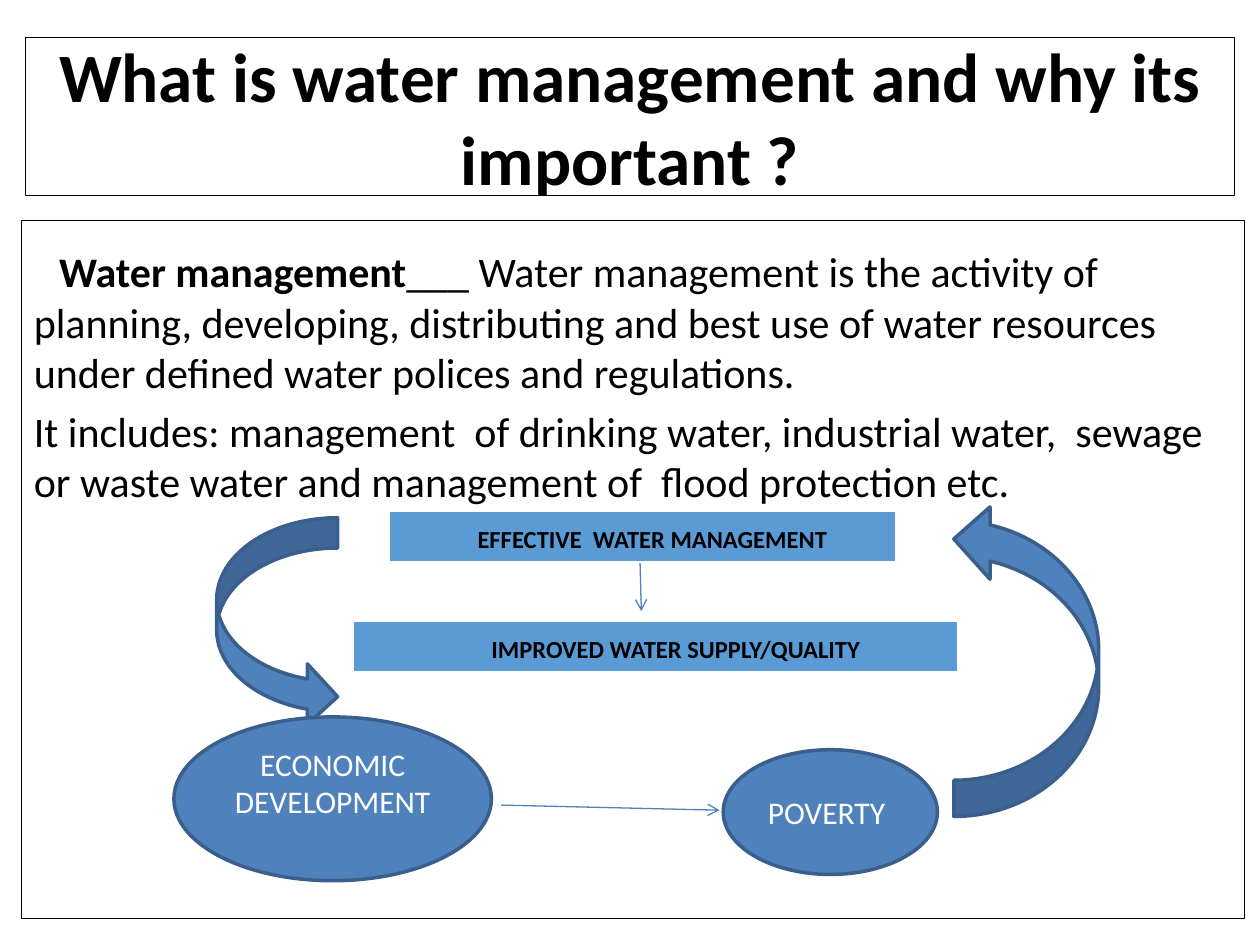
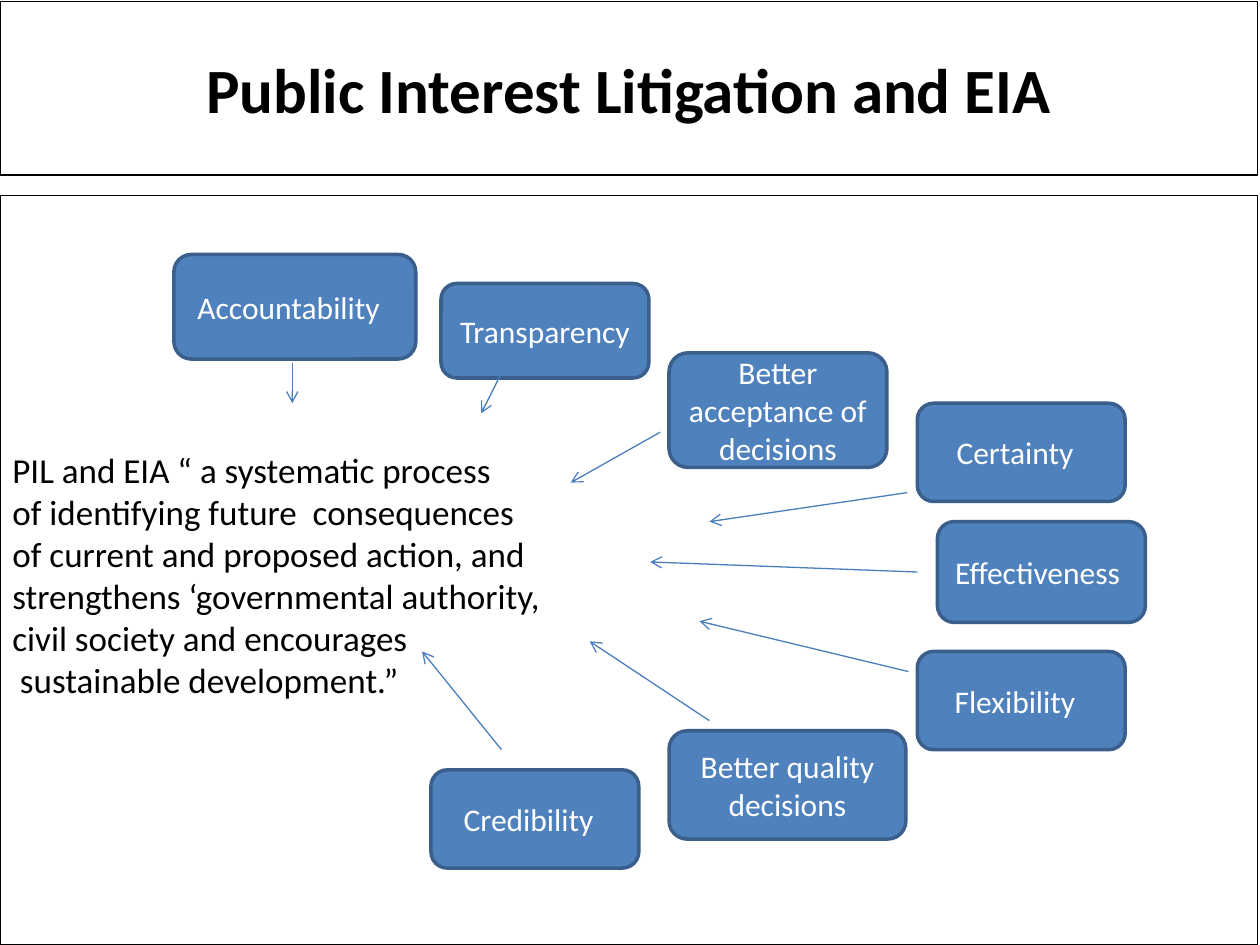
import pptx
import pptx.util
import pptx.dml.color
import pptx.enum.shapes
import pptx.enum.text
import pptx.oxml.ns
from lxml import etree

Inches = pptx.util.Inches
Pt = pptx.util.Pt
Kind = pptx.enum.shapes.MSO_SHAPE
Align = pptx.enum.text.PP_ALIGN
Anchor = pptx.enum.text.MSO_ANCHOR

FONT = "Calibri"
BLACK, WHITE = "000000", "FFFFFF"
BLUE, EDGE, BAND = "4F81BD", "3A5F8C", "5B9BD5"


def color(code):
    return pptx.dml.color.RGBColor.from_string(code)


class Deck:
    """Holds the style and the current slide."""

    def __init__(self):
        self.prs = pptx.Presentation()
        self.prs.slide_width = Inches(10)
        self.prs.slide_height = Inches(7.5)
        self.slide = None

    def page(self):
        self.slide = self.prs.slides.add_slide(self.prs.slide_layouts[6])

    def shape(self, kind, at, fill=BLUE, line=EDGE, width=2):
        item = self.slide.shapes.add_shape(kind, *map(Inches, at))
        item.shadow.inherit = False
        if fill:
            item.fill.solid()
            item.fill.fore_color.rgb = color(fill)
        else:
            item.fill.background()
        item.line.color.rgb = color(line)
        item.line.width = Pt(width)
        return item

    def frame(self, item, insets, anchor=Anchor.MIDDLE):
        """Set wrapping, anchor and insets (left, top, right, bottom)."""
        text = item.text_frame
        text.word_wrap = True
        text.vertical_anchor = anchor
        (text.margin_left, text.margin_top,
         text.margin_right, text.margin_bottom) = map(Inches, insets)
        return text

    def para(self, text, runs, size, ink=BLACK, align=Align.LEFT,
             first=False, before=0, indent=0):
        """Add a paragraph from (words, bold) runs."""
        par = text.paragraphs[0] if first else text.add_paragraph()
        par.alignment = align
        if before:
            par.space_before = Pt(before)
        if indent:
            par._p.get_or_add_pPr().set("indent", str(Inches(indent)))
        for words, bold in runs:
            run = par.add_run()
            run.text = words
            run.font.name = FONT
            run.font.size = Pt(size)
            run.font.bold = bold
            run.font.color.rgb = color(ink)

    def title(self, words, at, size):
        box = self.shape(Kind.RECTANGLE, at, None, BLACK, 0.75)
        text = self.frame(box, (0.1, 0.05, 0.1, 0.05))
        self.para(text, [(words, True)], size, align=Align.CENTER, first=True)

    def body(self, at, top, size, paras, before=0):
        """Outlined text area; paras hold (runs, first-line indent)."""
        box = self.shape(Kind.RECTANGLE, at, None, BLACK, 0.75)
        text = self.frame(box, (0.1, top, 0.1, 0.05), Anchor.TOP)
        for num, (runs, indent) in enumerate(paras):
            self.para(text, runs, size, first=num == 0,
                      before=before if num else 0, indent=indent)

    def node(self, kind, words, at, lean=0.0, lift=0.0):
        """Filled label; lean and lift move its words left and up."""
        item = self.shape(kind, at)
        text = self.frame(item, (0.05 - lean, 0.05, 0.05 + lean, 0.05 + 2 * lift))
        self.para(text, [(words, False)], 18, WHITE, Align.CENTER, first=True)

    def band(self, words, at, left):
        """One-cell table with a blue fill."""
        table = self.slide.shapes.add_table(1, 1, *map(Inches, at)).table
        table.first_row = table.horz_banding = False
        cell = table.cell(0, 0)
        cell.fill.solid()
        cell.fill.fore_color.rgb = color(BAND)
        cell.vertical_anchor = Anchor.MIDDLE
        cell.margin_left, cell.margin_right = Inches(left), Inches(0.04)
        cell.margin_top, cell.margin_bottom = Inches(0.1), Inches(0.04)
        self.para(cell.text_frame, [(words, True)], 14, first=True)

    def arrow(self, start, end, ink=BLUE):
        line = self.slide.shapes.add_connector(
            pptx.enum.shapes.MSO_CONNECTOR.STRAIGHT, *map(Inches, start + end))
        line.line.color.rgb = color(ink)
        line.line.width = Pt(0.75)
        tag = pptx.oxml.ns.qn
        etree.SubElement(line.line._get_or_add_ln(), tag("a:tailEnd"), type="arrow")
        etree.SubElement(line._element.spPr, tag("a:effectLst"))


def water(deck):
    deck.page()
    deck.title("What is water management and why its important ?",
               (0.2, 0.3, 9.6, 1.25), 39.6)
    deck.body((0.17, 1.75, 9.71, 5.54), 0.2, 24, [
        ([("Water management", True),
          ("___ Water management is the activity of planning, developing, "
           "distributing and best use of water resources under defined water "
           "polices and regulations.", False)], 0.2),
        ([("It includes: management  of drinking water, industrial water,  sewage "
           "or waste water and management of  flood protection etc.", False)], 0),
    ], before=4.8)

    # Cycle arrows and ovals
    deck.shape(Kind.CURVED_RIGHT_ARROW, (1.72, 4.11, 0.96, 1.66))
    back = deck.shape(Kind.CURVED_LEFT_ARROW, (7.57, 3.99, 1.15, 2.49))
    back._element.spPr.get_or_add_xfrm().set("flipV", "1")
    deck.node(Kind.OVAL, "POVERTY", (5.74, 5.95, 1.7, 0.99), lean=0.03)
    deck.node(Kind.OVAL, "ECONOMIC DEVELOPMENT", (1.38, 5.69, 2.52, 1.3), lift=0.13)

    # Bands and links
    deck.band("EFFECTIVE  WATER MANAGEMENT", (3.09, 4.06, 4.02, 0.4), 0.7)
    deck.band("IMPROVED WATER SUPPLY/QUALITY", (2.8, 4.93, 4.8, 0.4), 1.1)
    deck.arrow((3.98, 6.39), (5.71, 6.43))
    deck.arrow((5.08, 4.47), (5.09, 4.85))


def law(deck):
    deck.page()
    deck.title("Public Interest Litigation and EIA", (0, 0.01, 9.98, 1.38), 36)
    lines = [
        "PIL and EIA “ a systematic process",
        "of identifying future  consequences",
        "of current and proposed action, and",
        "strengthens ‘governmental authority,",
        "civil society and encourages",
    ]
    paras = [([(words, False)], 0) for words in lines]
    paras.append(([("sustainable development.”", False)], 0.06))
    deck.body((0, 1.55, 9.98, 5.95), 2.01, 20, paras)

    # Each benefit: label, box, lean, arrow start and end
    gains = [
        ("Accountability", (1.38, 2.02, 1.92, 0.83), 0.05, (2.32, 2.88), (2.32, 3.2)),
        ("Transparency", (3.5, 2.25, 1.65, 0.75), 0, (3.98, 2.96), (3.82, 3.28)),
        ("Better acceptance of decisions", (5.31, 2.8, 1.73, 0.91), 0,
         (5.24, 3.43), (4.53, 3.83)),
        ("Certainty", (7.28, 3.2, 1.65, 0.78), 0.05, (7.2, 3.91), (5.63, 4.14)),
        ("Effectiveness", (7.44, 4.14, 1.65, 0.8), 0.03, (7.28, 4.54), (5.16, 4.46)),
        ("Flexibility", (7.28, 5.17, 1.65, 0.78), 0.05, (7.21, 5.33), (5.55, 4.93)),
        ("Better quality decisions", (5.31, 5.8, 1.88, 0.86), 0,
         (5.63, 5.72), (4.68, 5.09)),
        ("Credibility", (3.42, 6.11, 1.65, 0.78), 0.05, (3.98, 5.95), (3.35, 5.17)),
    ]
    for words, at, lean, start, end in gains:
        deck.node(Kind.ROUNDED_RECTANGLE, words, at, lean)
        deck.arrow(start, end, "4B7EBC")


def main():
    deck = Deck()
    water(deck)
    law(deck)
    deck.prs.save("out.pptx")


if __name__ == "__main__":
    main()
